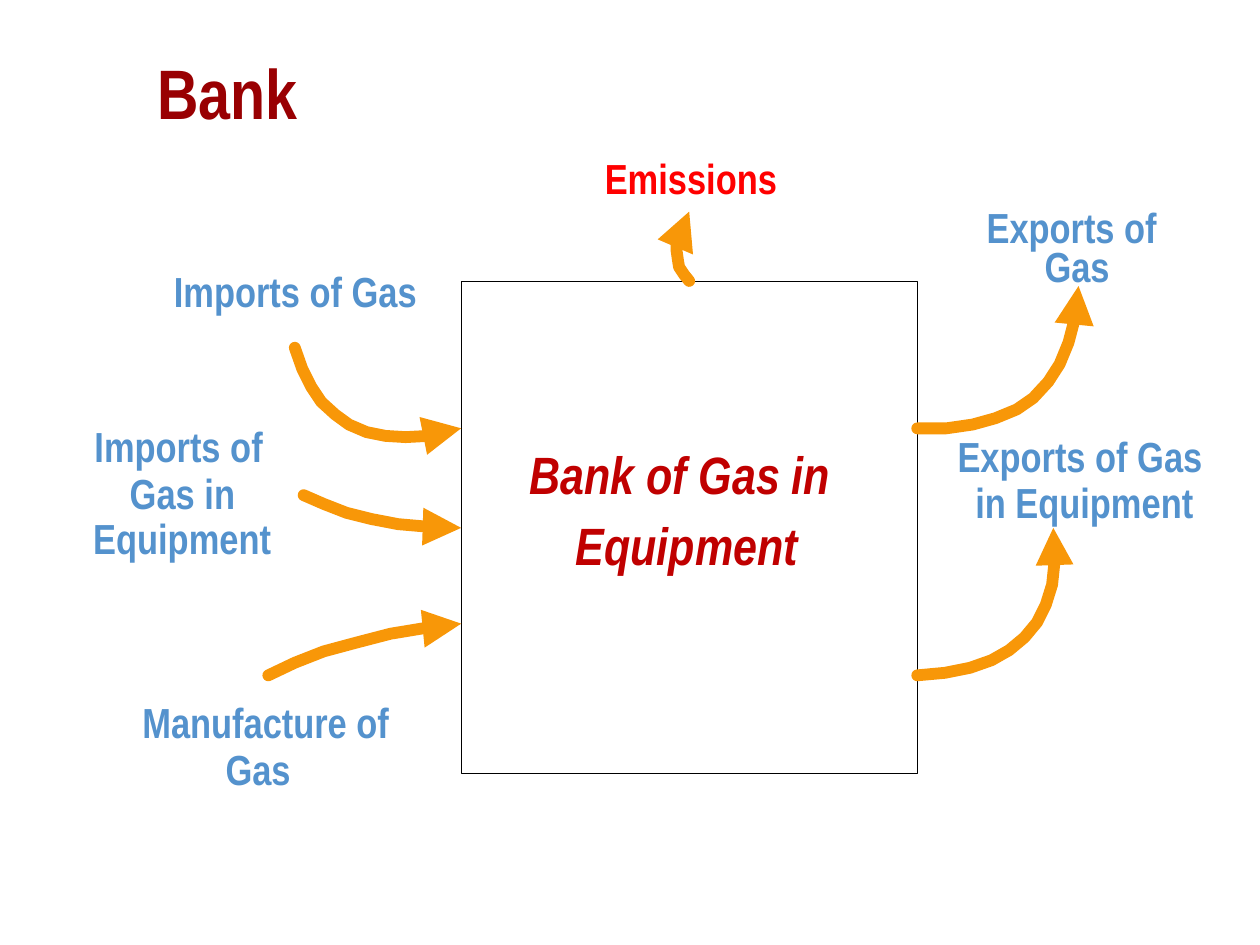
from pptx import Presentation
from pptx.dml.color import RGBColor
from pptx.enum.shapes import MSO_SHAPE
from pptx.enum.text import MSO_ANCHOR, MSO_AUTO_SIZE, PP_ALIGN
from pptx.oxml.ns import qn
from pptx.util import Inches, Pt

ORANGE, BLUE, RED, DARK_RED = "F89708", "5492CD", "FF0000", "C00000"

# Lines of text: (text, left, top, width)
BANK_LINES = [
    ("Bank of Gas in", 4.2, 3.51, 2.53),
    ("Equipment", 4.57, 4.07, 1.8),
]
FLOW_LINES = [
    ("Imports of Gas", 1.38, 2.11, 2.04),
    ("Imports of", 0.75, 3.34, 1.44),
    ("Gas in", 1.03, 3.71, 0.93),
    ("Equipment", 0.74, 4.07, 1.46),
    ("Manufacture of", 1.13, 5.53, 2.07),
    ("Gas", 1.79, 5.9, 0.53),
    ("Exports of", 7.83, 1.6, 1.45),
    ("Gas", 8.29, 1.91, 0.53),
    ("Exports of Gas", 7.6, 3.42, 2.06),
    ("in Equipment", 7.74, 3.78, 1.75),
]

# Flow arrows: (points of the curved shaft, corners of the head)
ARROWS = [
    # Imports of gas
    ([(2.34, 2.76), (2.4, 2.93), (2.47, 3.07), (2.55, 3.19), (2.66, 3.29),
      (2.77, 3.37), (2.91, 3.43), (3.06, 3.46), (3.22, 3.47), (3.4, 3.46)],
     [(3.33, 3.31), (3.66, 3.4), (3.39, 3.61)]),
    # Imports of gas in equipment
    ([(2.41, 3.93), (2.57, 4), (2.75, 4.07), (2.95, 4.12), (3.16, 4.16),
      (3.39, 4.18)],
     [(3.36, 4.03), (3.66, 4.19), (3.35, 4.33)]),
    # Exports of gas
    ([(7.28, 3.4), (7.51, 3.4), (7.72, 3.37), (7.9, 3.32), (8.07, 3.25),
      (8.2, 3.16), (8.32, 3.03), (8.41, 2.89), (8.48, 2.72), (8.53, 2.53)],
     [(8.68, 2.59), (8.56, 2.27), (8.37, 2.56)]),
    # Exports of gas in equipment
    ([(7.28, 5.36), (7.5, 5.34), (7.7, 5.3), (7.87, 5.24), (8.01, 5.16),
      (8.13, 5.06), (8.23, 4.94), (8.3, 4.8), (8.35, 4.64), (8.37, 4.45)],
     [(8.52, 4.48), (8.36, 4.19), (8.22, 4.49)]),
    # Emissions
    ([(5.47, 2.23), (5.43, 2.18), (5.39, 2.12), (5.38, 2.06), (5.37, 1.99),
      (5.37, 1.93)],
     [(5.22, 1.9), (5.47, 1.68), (5.5, 2.02)]),
    # Manufacture of gas
    ([(2.13, 5.36), (2.34, 5.26), (2.57, 5.17), (2.83, 5.1), (3.1, 5.03),
      (3.4, 4.98)],
     [(3.37, 5.14), (3.66, 4.95), (3.34, 4.84)]),
]


def color(hex_string):
    return RGBColor.from_string(hex_string)


def write(frame, text, size, hue, italic=False):
    """Put one bold, left-aligned line of text into a text frame."""
    para = frame.paragraphs[0]
    para.alignment = PP_ALIGN.LEFT
    span = para.add_run()
    span.text = text
    span.font.name = "Arial Narrow"
    span.font.size = Pt(size)
    span.font.bold = True
    span.font.italic = italic
    span.font.color.rgb = color(hue)


class Diagram:
    """Draws the elements of the flow diagram on one page."""

    arrow_color = ORANGE
    arrow_width = 6.75

    def __init__(self, page):
        self.page = page

    def title(self, text):
        box = self.page.shapes.title
        box.left, box.top = Inches(1.15), Inches(0.18)
        box.width, box.height = Inches(8.66), Inches(1.1)
        box.text_frame.vertical_anchor = MSO_ANCHOR.MIDDLE
        write(box.text_frame, text, 40, "990002")

    def frame(self, left, top, width, height):
        box = self.page.shapes.add_shape(
            MSO_SHAPE.RECTANGLE, Inches(left), Inches(top), Inches(width), Inches(height))
        box.shadow.inherit = False
        box.fill.background()
        box.line.color.rgb = color("000000")
        box.line.width = Pt(0.38)

    def label(self, text, left, top, width, size=24, hue=BLUE, italic=False):
        box = self.page.shapes.add_textbox(
            Inches(left), Inches(top), Inches(width), Inches(size / 60))
        frame = box.text_frame
        frame.margin_left = frame.margin_right = 0
        frame.margin_top = frame.margin_bottom = 0
        frame.word_wrap = False
        frame.auto_size = MSO_AUTO_SIZE.SHAPE_TO_FIT_TEXT
        write(frame, text, size, hue, italic)

    def outline(self, points, close):
        start, *rest = [(Inches(x), Inches(y)) for x, y in points]
        builder = self.page.shapes.build_freeform(*start)
        builder.add_line_segments(rest, close=close)
        shape = builder.convert_to_shape()
        shape.shadow.inherit = False
        return shape

    def arrow(self, shaft_points, head_points):
        shaft = self.outline(shaft_points, close=False)
        shaft.fill.background()
        shaft.line.color.rgb = color(self.arrow_color)
        shaft.line.width = Pt(self.arrow_width)
        shaft.element.spPr.find(qn("a:ln")).set("cap", "rnd")

        head = self.outline(head_points, close=True)
        head.fill.solid()
        head.fill.fore_color.rgb = color(self.arrow_color)
        head.line.fill.background()


def main():
    deck = Presentation()
    deck.slide_width, deck.slide_height = Inches(10), Inches(7.5)
    diagram = Diagram(deck.slides.add_slide(deck.slide_layouts[5]))

    diagram.title("Bank")
    diagram.frame(3.66, 2.23, 3.62, 3.91)
    for line in BANK_LINES:
        diagram.label(*line, size=30, hue=DARK_RED, italic=True)
    for shaft_points, head_points in ARROWS:
        diagram.arrow(shaft_points, head_points)
    for line in FLOW_LINES:
        diagram.label(*line)
    diagram.label("Emissions", 4.8, 1.21, 1.4, hue=RED)

    deck.save("out.pptx")


if __name__ == "__main__":
    main()
